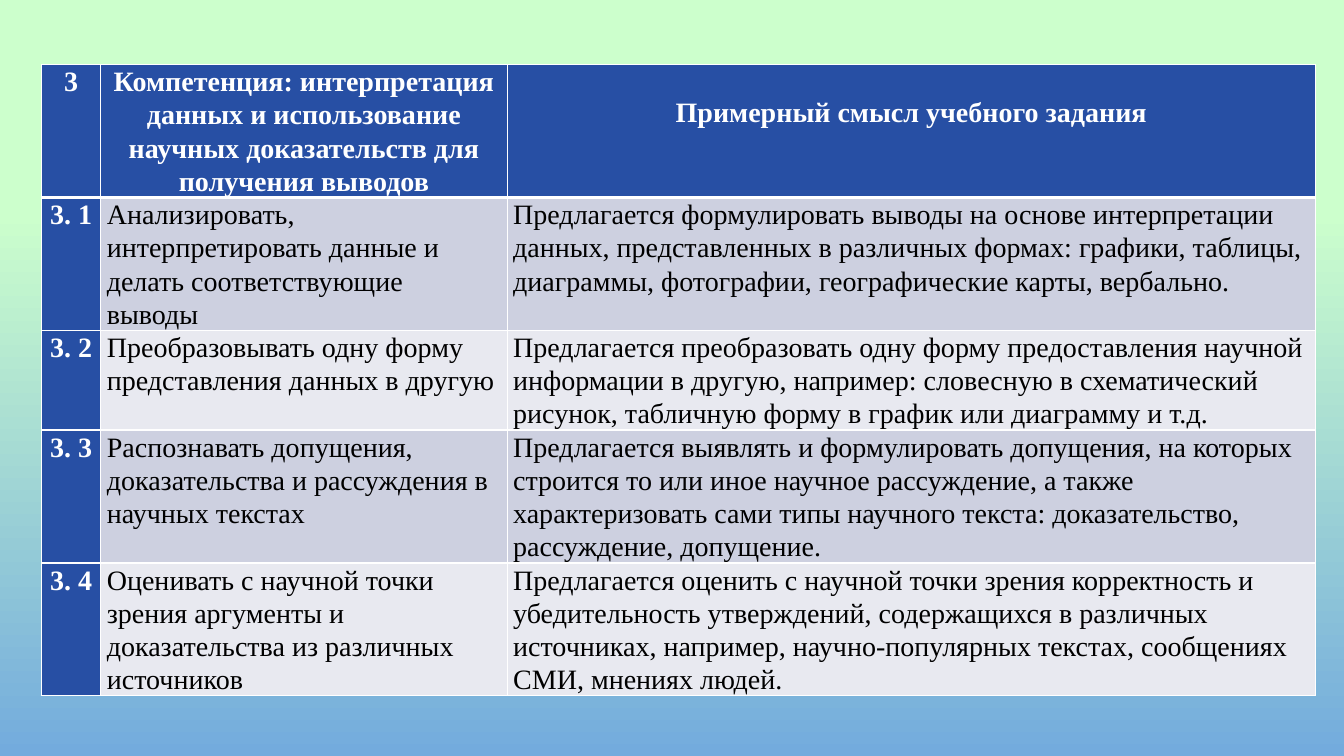
from lxml import etree
from pptx import Presentation
from pptx.dml.color import RGBColor
from pptx.enum.text import PP_ALIGN
from pptx.oxml.ns import qn
from pptx.util import Inches, Pt

LEFT, CENTER = PP_ALIGN.LEFT, PP_ALIGN.CENTER

# Content
ROWS = [
    ("3",
     "Компетенция: интерпретация данных и использование научных доказательств для получения выводов",
     "Примерный смысл учебного задания"),
    ("3. 1",
     "Анализировать, интерпретировать данные и делать соответствующие выводы",
     "Предлагается формулировать выводы на основе интерпретации данных, представленных в различных "
     "формах: графики, таблицы, диаграммы, фотографии, географические карты, вербально."),
    ("3. 2",
     "Преобразовывать одну форму представления данных в другую",
     "Предлагается преобразовать одну форму предоставления научной информации в другую, например: "
     "словесную в схематический рисунок, табличную форму в график или диаграмму и т.д."),
    ("3. 3",
     "Распознавать допущения, доказательства и рассуждения в научных текстах",
     "Предлагается выявлять и формулировать допущения, на которых строится то или иное научное "
     "рассуждение, а также характеризовать сами типы научного текста: доказательство, рассуждение, "
     "допущение."),
    ("3. 4",
     "Оценивать с научной точки зрения аргументы и доказательства из различных источников",
     "Предлагается оценить с научной точки зрения корректность и убедительность утверждений, "
     "содержащихся в различных источниках, например, научно-популярных текстах, сообщениях СМИ, "
     "мнениях людей."),
]
WIDTHS = (0.59, 4.03, 8.02)
HEIGHTS = (0.71, 1.19, 0.95, 1.19, 1.19)
FRAME = (0.41, 0.64, 12.64, 6.54)

THEME = {
    "font": "Times New Roman", "size": 20, "spacing": 1.07,
    "head": "274FA4", "bands": ("E8E9F0", "CDD0E0"),
    "light": "FFFFFF", "dark": "000000",
    "sky": ((0.28, "CCFFCC"), (1, "73ABDD")),
}


def rgb(code):
    return RGBColor.from_string(code)


def write(cell, text, color, bold=False, align=LEFT, top=0):
    cell.margin_left = cell.margin_right = Inches(0.06)
    cell.margin_top, cell.margin_bottom = Inches(top), 0
    para = cell.text_frame.paragraphs[0]
    para.alignment = align
    para.line_spacing = THEME["spacing"]
    run = para.add_run()
    run.text = text
    font = run.font
    font.name, font.size, font.bold = THEME["font"], Pt(THEME["size"]), bold
    font.color.rgb = rgb(color)


def border(cell, top, bottom):
    props = cell._tc.get_or_add_tcPr()
    sides = (("lnL", 1), ("lnR", 1), ("lnT", top), ("lnB", bottom))
    for place, (side, width) in enumerate(sides):
        line = etree.Element(qn("a:" + side), w=str(Pt(width)))
        fill = etree.SubElement(line, qn("a:solidFill"))
        etree.SubElement(fill, qn("a:srgbClr"), val=THEME["light"])
        props.insert(place, line)


deck = Presentation()
deck.slide_width, deck.slide_height = Inches(13.33), Inches(7.5)
slide = deck.slides.add_slide(deck.slide_layouts[6])

# Background, top to bottom
sky = slide.background.fill
sky.gradient()
sky.gradient_angle = 270
for stop, (place, code) in zip(sky.gradient_stops, THEME["sky"]):
    stop.position = place
    stop.color.rgb = rgb(code)

# Table grid
frame = slide.shapes.add_table(len(ROWS), len(WIDTHS), *map(Inches, FRAME))
table = frame.table
for column, width in zip(table.columns, WIDTHS):
    column.width = Inches(width)
for row, height in zip(table.rows, HEIGHTS):
    row.height = Inches(height)
frame.height = Inches(FRAME[3])

# Cells: blue first row and column, banded body
for r, texts in enumerate(ROWS):
    for c, text in enumerate(texts):
        cell = table.cell(r, c)
        head = r == 0 or c == 0
        cell.fill.solid()
        cell.fill.fore_color.rgb = rgb(THEME["head"] if head else THEME["bands"][r % 2])
        border(cell, top=3 if r == 1 else 1, bottom=3 if r == 0 else 1)
        write(cell, text, THEME["light" if head else "dark"], bold=head,
              align=CENTER if head else LEFT,
              top=0.31 if (r, c) == (0, 2) else 0)

deck.save("out.pptx")
